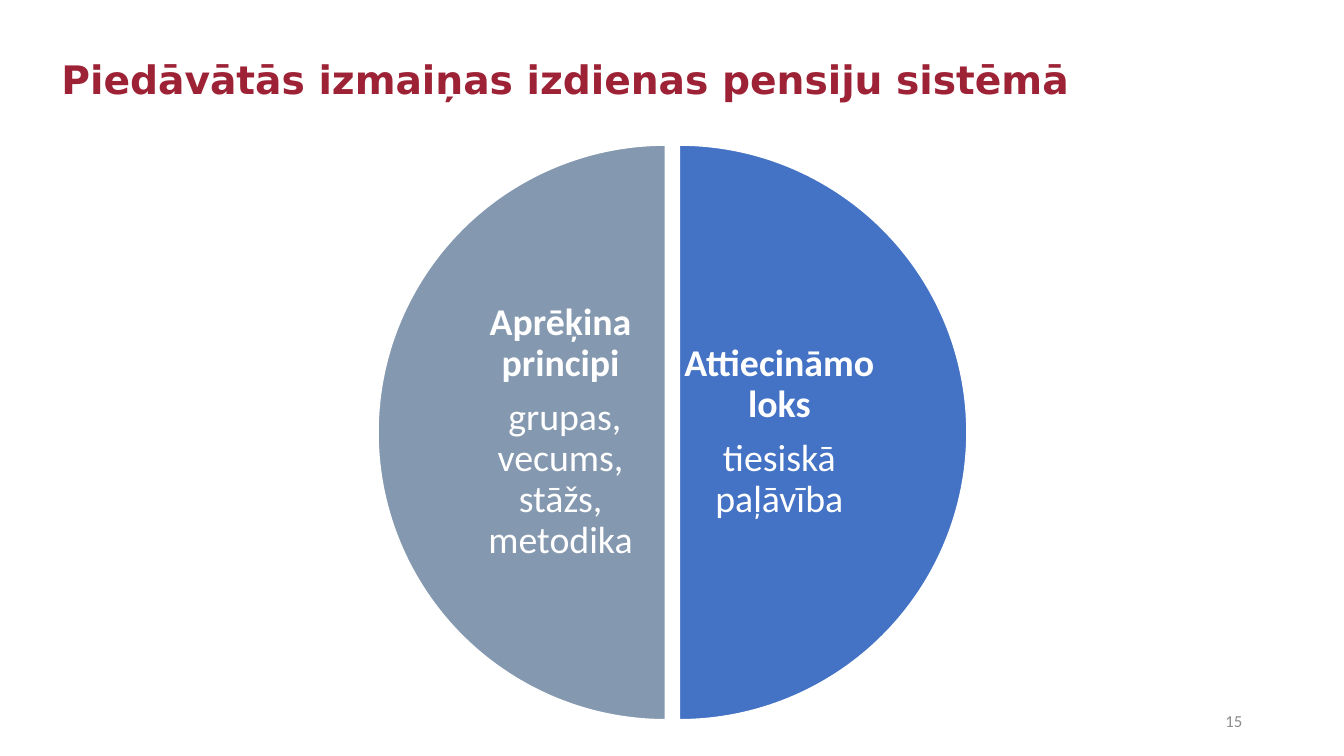
from pptx import Presentation
from pptx.dml.color import RGBColor
from pptx.enum.shapes import MSO_SHAPE
from pptx.enum.text import MSO_ANCHOR, MSO_AUTO_SIZE, PP_ALIGN
from pptx.util import Inches, Pt

WHITE = RGBColor(0xFF, 0xFF, 0xFF)
BLUE = RGBColor(0x44, 0x72, 0xC4)
SLATE = RGBColor(0x84, 0x98, 0xB0)
CRIMSON = RGBColor(0x9D, 0x22, 0x35)
GREY = RGBColor(0x8C, 0x8C, 0x8C)

HEADLINE = "Piedāvātās izmaiņas izdienas pensiju sistēmā"
PAGE = "15"
TOP_ANGLE, BOTTOM_ANGLE = 162, 54
HALVES = [
    {"heading": "Attiecināmo loks", "detail": "tiesiskā paļāvība", "color": BLUE,
     "left": 3.89, "label_left": 6.73, "angles": (TOP_ANGLE, BOTTOM_ANGLE)},
    {"heading": "Aprēķina principi", "detail": " grupas, vecums, stāžs, metodika",
     "color": SLATE, "left": 3.75, "label_left": 4.56,
     "angles": (BOTTOM_ANGLE, TOP_ANGLE)},
]
CIRCLE_TOP, DIAMETER = 1.44, 5.7
LABEL_WIDTH, LABEL_HEIGHT = 2, 4
LABEL_TOP = CIRCLE_TOP + (DIAMETER - LABEL_HEIGHT) / 2
LABEL_INSET = 0.04


def box(left, top, width, height):
    return [Inches(value) for value in (left, top, width, height)]


def write(paragraph, text, size, color, align, font="Calibri", bold=False):
    paragraph.alignment = align
    run = paragraph.add_run()
    run.text = text
    run.font.name = font
    run.font.size = Pt(size)
    run.font.bold = bold
    run.font.color.rgb = color


def add_half(shapes, half):
    pie = shapes.add_shape(MSO_SHAPE.PIE, *box(half["left"], CIRCLE_TOP, DIAMETER, DIAMETER))
    pie.shadow.inherit = False
    pie.adjustments[0], pie.adjustments[1] = half["angles"]
    pie.fill.solid()
    pie.fill.fore_color.rgb = half["color"]
    pie.line.color.rgb = WHITE
    pie.line.width = Pt(1)

    label = shapes.add_textbox(
        *box(half["label_left"], LABEL_TOP, LABEL_WIDTH, LABEL_HEIGHT)).text_frame
    label.word_wrap = True
    label.vertical_anchor = MSO_ANCHOR.MIDDLE
    label.margin_left = label.margin_right = Inches(LABEL_INSET)
    label.margin_top = label.margin_bottom = Inches(LABEL_INSET)
    heading, detail = label.paragraphs[0], label.add_paragraph()
    write(heading, half["heading"], 27, WHITE, PP_ALIGN.CENTER, bold=True)
    write(detail, half["detail"], 27, WHITE, PP_ALIGN.CENTER)
    for paragraph in (heading, detail):
        paragraph.line_spacing = 0.9
        paragraph.space_after = Pt(9.5)


def main():
    deck = Presentation()
    deck.slide_width, deck.slide_height = Inches(13.33), Inches(7.5)
    slide = deck.slides.add_slide(deck.slide_layouts[5])

    title = slide.shapes.title
    title.left, title.top, title.width, title.height = box(0.51, 0.55, 11.91, 1.45)
    headline = title.text_frame
    headline.auto_size = MSO_AUTO_SIZE.NONE
    headline.vertical_anchor = MSO_ANCHOR.TOP
    headline.paragraphs[0].line_spacing = 0.9
    write(headline.paragraphs[0], HEADLINE, 28, CRIMSON, PP_ALIGN.LEFT, "DejaVu Sans", True)

    circle = slide.shapes.add_group_shape()
    for half in HALVES:
        add_half(circle.shapes, half)

    page = slide.shapes.add_textbox(*box(9.42, 6.95, 3, 0.4)).text_frame
    page.word_wrap = True
    page.vertical_anchor = MSO_ANCHOR.MIDDLE
    write(page.paragraphs[0], PAGE, 12, GREY, PP_ALIGN.RIGHT)

    deck.save("out.pptx")


if __name__ == "__main__":
    main()
